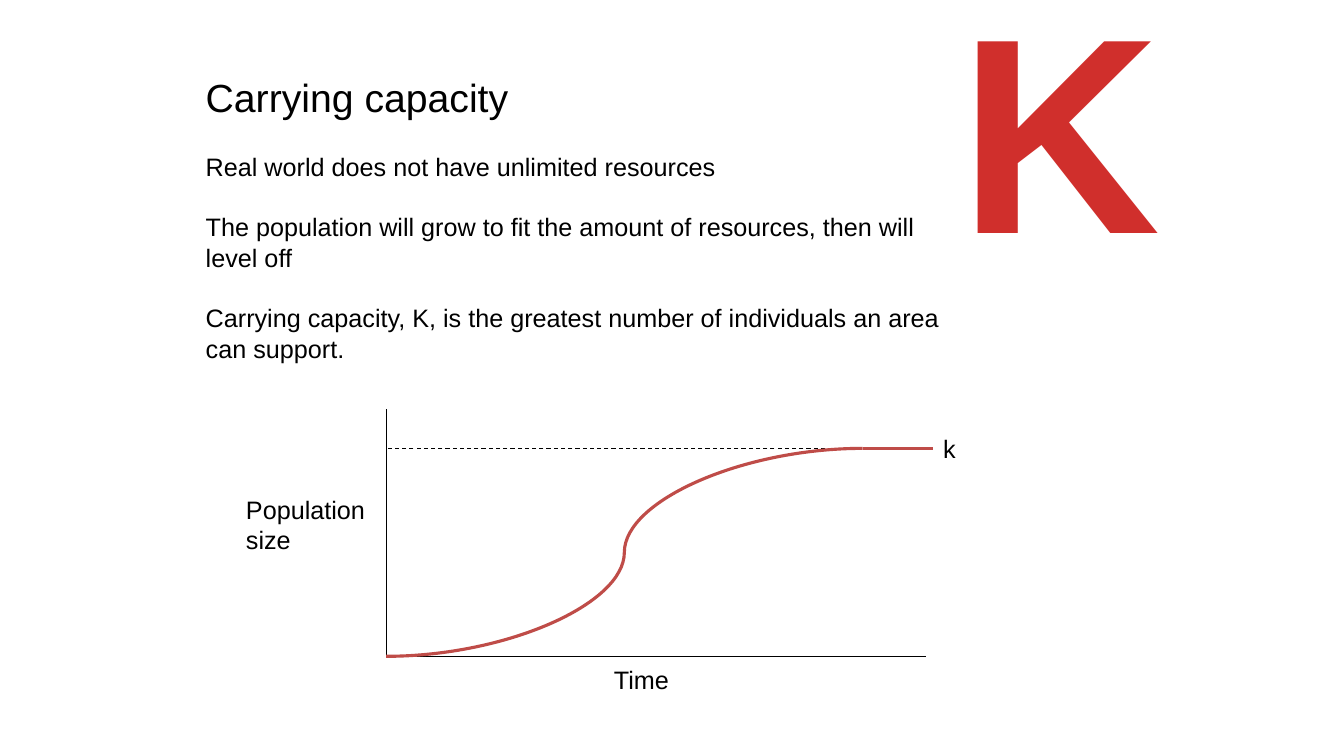
from pptx import Presentation
from pptx.dml.color import RGBColor
from pptx.enum.dml import MSO_LINE
from pptx.enum.shapes import MSO_CONNECTOR
from pptx.enum.text import MSO_ANCHOR, MSO_AUTO_SIZE, PP_ALIGN
from pptx.oxml.ns import qn
from pptx.util import Cm, Pt
from lxml.etree import SubElement

COLORS = {"text": "000000", "letter": "D02F2C", "curve": "BF4C48"}
FONT = "Arial"
STATEMENTS = [
    "Real world does not have unlimited resources",
    "The population will grow to fit the amount of resources, then will level off",
    "Carrying capacity, K, is the greatest number of individuals an area can support.",
]


def write(paragraph, text, size=18, color="text", bold=False, align=PP_ALIGN.LEFT):
    paragraph.alignment = align
    run = paragraph.add_run()
    run.text = text
    run.font.name = FONT
    run.font.size = Pt(size)
    run.font.bold = bold
    run.font.color.rgb = RGBColor.from_string(COLORS[color])


def place(shape, left, top, width, height):
    shape.left, shape.top = Cm(left), Cm(top)
    shape.width, shape.height = Cm(width), Cm(height)
    frame = shape.text_frame
    frame.word_wrap = True
    frame.auto_size = MSO_AUTO_SIZE.NONE
    frame.vertical_anchor = MSO_ANCHOR.TOP
    return frame


def add_label(slide, text, left, top, width, height, **style):
    box = slide.shapes.add_textbox(0, 0, 0, 0)
    frame = place(box, left, top, width, height)
    write(frame.paragraphs[0], text, **style)


def add_line(slide, start, end, color="text", width=0.75, kind=MSO_CONNECTOR.STRAIGHT):
    line = slide.shapes.add_connector(kind, *(Cm(value) for value in (*start, *end)))
    line.line.color.rgb = RGBColor.from_string(COLORS[color])
    line.line.width = Pt(width)
    SubElement(line._element.spPr, qn("a:effectLst"))
    return line


def add_statements(slide, left, top, width, height):
    title_height = 1.4
    body_offset = 1.95

    # Heading
    frame = place(slide.shapes.title, left, top, width, title_height)
    write(frame.paragraphs[0], "Carrying capacity", size=28)

    # Statements, one empty line apart
    frame = place(slide.placeholders[1], left, top + body_offset, width, height - body_offset)
    for index, statement in enumerate(STATEMENTS):
        paragraph = frame.paragraphs[0] if index == 0 else frame.add_paragraph()
        paragraph.space_before = Pt(0)
        paragraph.space_after = Pt(21.7)
        properties = paragraph._p.get_or_add_pPr()
        properties.set("marL", "0")
        properties.set("indent", "0")
        SubElement(properties, qn("a:buNone"))
        write(paragraph, statement)


def add_growth_graph(slide, left, top, width, height):
    right, bottom = left + width, top + height
    capacity = top + 0.99
    level_start = left + 12.01
    level_end = level_start + 1.78

    # Axes and capacity limit
    add_line(slide, (left, top), (left, bottom))
    add_line(slide, (left, bottom), (right, bottom))
    limit = add_line(slide, (right, capacity), (left, capacity))
    limit.line.dash_style = MSO_LINE.DASH

    # Labels
    add_label(slide, "Population size", left - 3.78, top + 2.01, 3.81, 1.8)
    add_label(slide, "Time", left + 5.49, bottom + 0.08, 3.81, 1.02)
    add_label(slide, "k", level_end, capacity - 0.51, 3.81, 1.02)

    # Growth curve that levels off
    add_line(slide, (left, bottom), (level_start, capacity), "curve", 2.25, MSO_CONNECTOR.CURVE)
    add_line(slide, (level_start, capacity), (level_end, capacity), "curve", 2.25)


def main():
    presentation = Presentation()
    presentation.slide_width, presentation.slide_height = Cm(33.87), Cm(19.05)
    slide = presentation.slides.add_slide(presentation.slide_layouts[1])

    add_statements(slide, 4.93, 1.73, 19.81, 7.62)
    add_label(slide, "K", 23.93, -1.27, 5.36, 8.76,
              size=199, color="letter", bold=True, align=PP_ALIGN.CENTER)
    add_growth_graph(slide, 9.73, 10.31, 13.61, 6.23)
    presentation.save("out.pptx")


if __name__ == "__main__":
    main()
